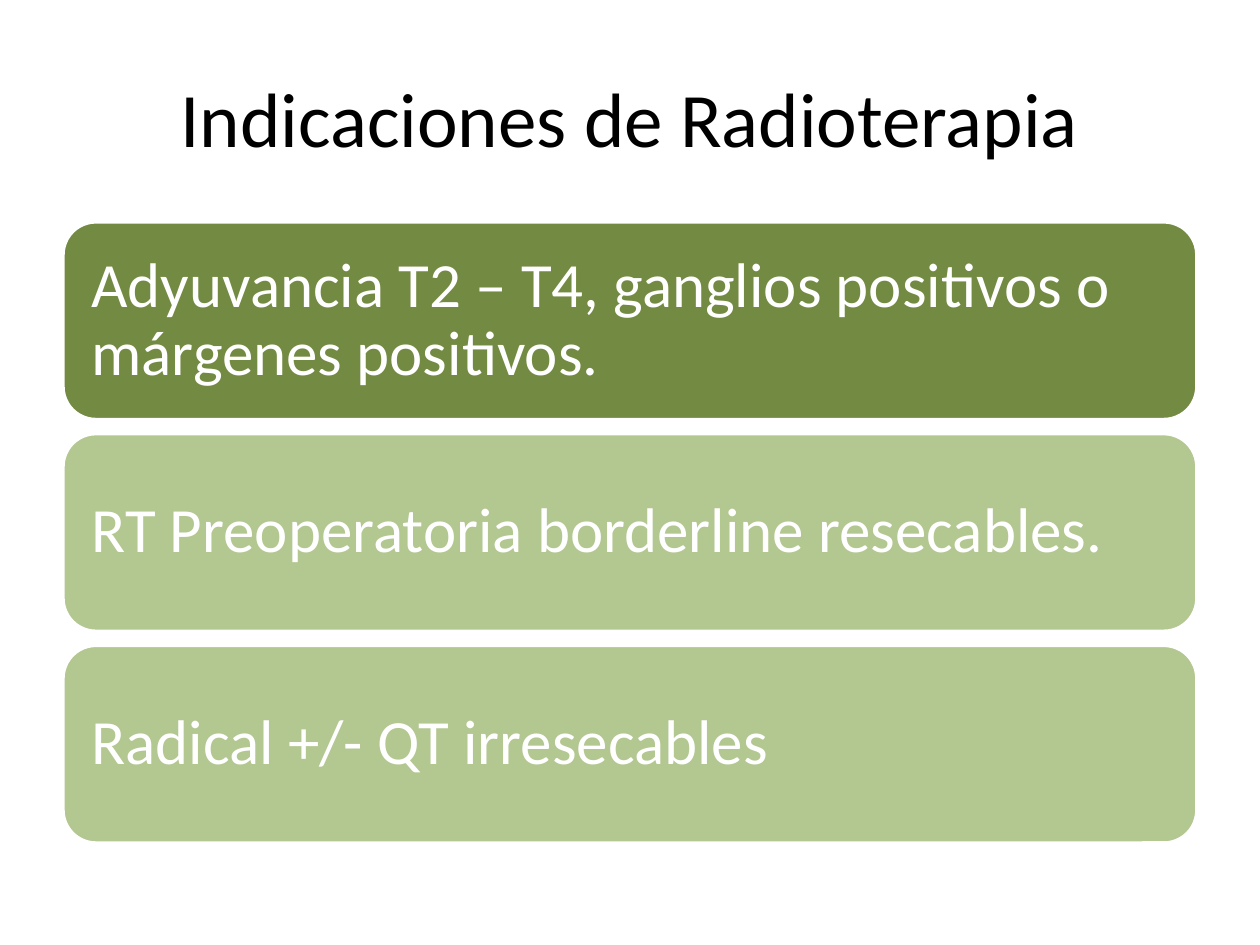
import pptx
import pptx.util
import pptx.dml.color
import pptx.enum.shapes
import pptx.enum.text
from dataclasses import dataclass

Pt = pptx.util.Pt
RGB = pptx.dml.color.RGBColor.from_string
PP_ALIGN = pptx.enum.text.PP_ALIGN
MIDDLE = pptx.enum.text.MSO_ANCHOR.MIDDLE


@dataclass(frozen=True)
class Theme:
    font: str = "Calibri"
    title_size: int = 44
    body_size: int = 36
    title_color: str = "000000"
    white: str = "FFFFFF"
    dark_green: str = "738A42"
    light_green: str = "B3C791"


theme = Theme()


def format_text(tf, size, color, align):
    tf.word_wrap = True
    tf.vertical_anchor = MIDDLE
    for p in tf.paragraphs:
        p.alignment = align
        for r in p.runs:
            r.font.name = theme.font
            r.font.size = Pt(size)
            r.font.color.rgb = RGB(color)


prs = pptx.Presentation()
prs.slide_width, prs.slide_height = Pt(720), Pt(540)
s = prs.slides.add_slide(prs.slide_layouts.get_by_name("Title Only"))

left, width = 36, 648
title = s.shapes.title
title.left, title.top, title.width, title.height = Pt(left), Pt(21.6), Pt(width), Pt(90)
title.text_frame.text = "Indicaciones de Radioterapia"
format_text(title.text_frame, theme.title_size, theme.title_color, PP_ALIGN.CENTER)

indications = [
    ("Adyuvancia T2 – T4, ganglios positivos o márgenes positivos.", theme.dark_green),
    ("RT Preoperatoria borderline resecables.", theme.light_green),
    ("Radical +/- QT irresecables", theme.light_green),
]
first_top, card_height, pitch, inset = 126.8, 113, 121, 10.8

for i, (text, fill) in enumerate(indications):
    sp = s.shapes.add_shape(
        pptx.enum.shapes.MSO_SHAPE.ROUNDED_RECTANGLE,
        Pt(left), Pt(first_top + i * pitch), Pt(width), Pt(card_height))
    sp.shadow.inherit = False
    sp.fill.solid()
    sp.fill.fore_color.rgb = RGB(fill)
    sp.line.color.rgb = RGB(theme.white)
    sp.line.width = Pt(2)
    tf = sp.text_frame
    tf.margin_left = tf.margin_right = tf.margin_top = tf.margin_bottom = Pt(inset)
    tf.text = text
    tf.paragraphs[0].line_spacing = 0.9
    format_text(tf, theme.body_size, theme.white, PP_ALIGN.LEFT)

prs.save("out.pptx")
